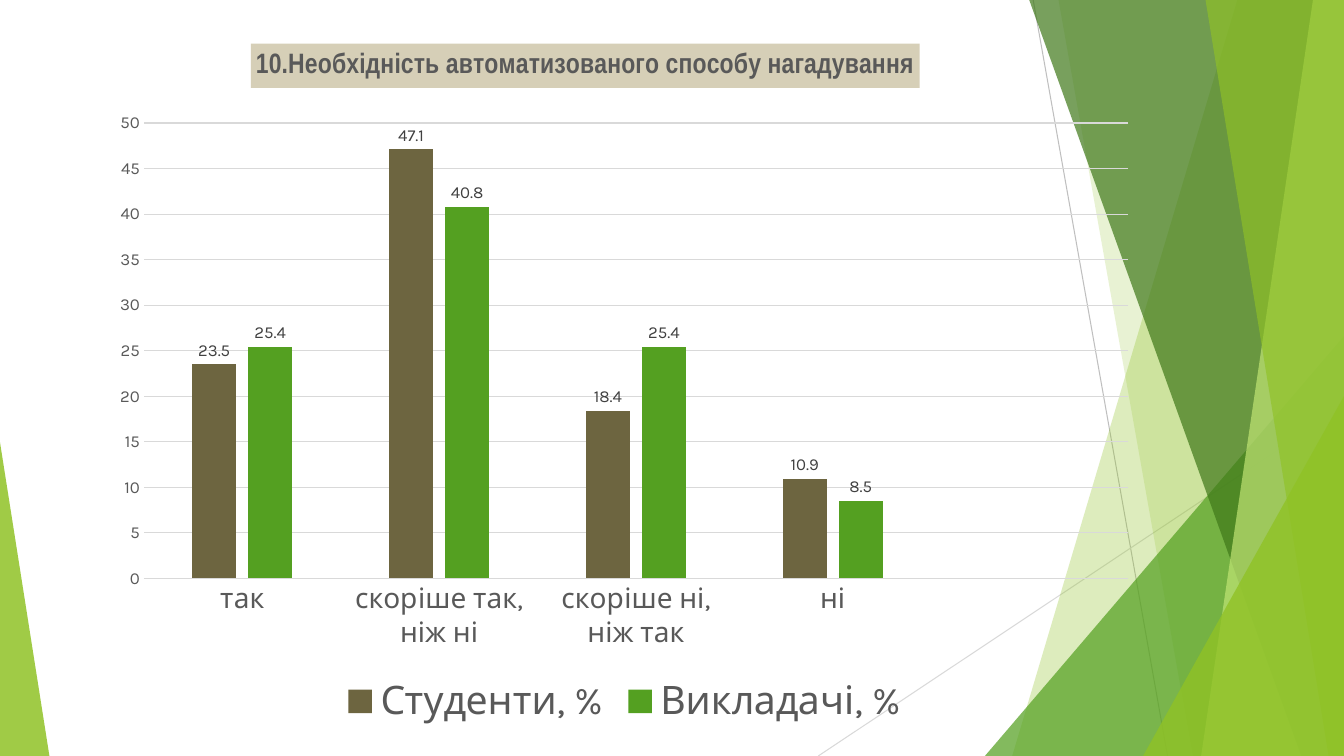
"""Build the slide with a column chart on the need for automated reminders."""
from lxml import etree
from pptx import Presentation
from pptx.chart.data import CategoryChartData
from pptx.dml.color import RGBColor
from pptx.enum import chart as ch, shapes
from pptx.oxml import parse_xml
from pptx.oxml.ns import nsdecls, qn
from pptx.util import Pt

COLORS = {"lime": "90C226", "green": "54A021", "dark": "3F7819", "pale": "C0E474",
          "olive": "6D6540", "sand": "D6CFB7", "text": "595959", "label": "404040",
          "grid": "D9D9D9", "line": "BFBFBF"}
W, H, TOP = 960, 540, -0.6


def rgb(name):
    return RGBColor.from_string(COLORS[name])


def set_font(font, size, color, name="Karla", bold=False):
    formats = {"size": Pt(size), "name": name, "bold": bold}
    for key, value in formats.items():
        setattr(font, key, value)
    font.color.rgb = rgb(color)


prs = Presentation()
prs.slide_width, prs.slide_height = Pt(W), Pt(H)
s = prs.slides.add_slide(prs.slide_layouts[6])

for x1, y1, x2, y2, color in [(738, 0, 834, H, "line"), (W, 290, 584.5, H, "grid")]:
    line = s.shapes.add_connector(shapes.MSO_CONNECTOR.STRAIGHT, Pt(x1), Pt(y1), Pt(x2), Pt(y2))
    line.line.color.rgb = rgb(color)
    line.line.width = Pt(0.75)
    etree.SubElement(line._element.spPr, qn("a:effectLst"))

facets = [
    ("band", (884, 723), "lime", 30),
    ("band", (756, 852), "lime", 20),
    ("triangle", (703.5, 240, 256.5, 300, 1), "green", 72),
    ("band", (735, 929.5), "dark", 70),
    ("band", (938, 858), "pale", 70),
    ("band", (861, 949), "lime", 65),
    ("triangle", (816.5, 283, 143.5, 257, 1), "lime", 80),
    ("triangle", (0, 316, 35.3, 224, 0), "lime", 85),
]
for kind, geometry, color, alpha in facets:
    if kind == "band":
        top_x, bottom_x = geometry
        fb = s.shapes.build_freeform(Pt(top_x), Pt(TOP))
        fb.add_line_segments([(Pt(x), Pt(y)) for x, y in [(W, TOP), (W, H), (bottom_x, H)]])
        sp = fb.convert_to_shape()
    else:
        *box, apex = geometry
        sp = s.shapes.add_shape(shapes.MSO_SHAPE.ISOSCELES_TRIANGLE, *map(Pt, box))
        sp.adjustments[0] = apex
    sp.shadow.inherit = False
    sp.line.fill.background()
    sp.fill.solid()
    sp.fill.fore_color.rgb = rgb(color)
    clr = sp._element.spPr.find(qn("a:solidFill"))[0]
    etree.SubElement(clr, qn("a:alpha"), val=str(alpha * 1000))

data = CategoryChartData()
data.categories = ["так", "скоріше так, ніж ні", "скоріше ні, ніж так", "ні", ""]
data.add_series("Студенти, %", [23.5, 47.1, 18.4, 10.9, None])
data.add_series("Викладачі, %", [25.4, 40.8, 25.4, 8.5, None])
chart = s.shapes.add_chart(ch.XL_CHART_TYPE.COLUMN_CLUSTERED, Pt(71.3), Pt(25.2),
                           Pt(749.5), Pt(497.5), data).chart
set_font(chart.font, 10, "label")

chart.has_title = True
title = chart.chart_title
r = title.text_frame.paragraphs[0].add_run()
r.text = "10.Необхідність автоматизованого способу нагадування"
set_font(r.font, 20, "text", "Arial Narrow", True)
title.format.fill.solid()
title.format.fill.fore_color.rgb = rgb("sand")

plot = chart.plots[0]
plot.gap_width, plot.overlap, plot.vary_by_categories = 219, -27, False
for series, color in zip(plot.series, ["olive", "green"]):
    series.format.fill.solid()
    series.format.fill.fore_color.rgb = rgb(color)
    labels = series.data_labels
    labels.show_value = True
    labels.position = ch.XL_LABEL_POSITION.OUTSIDE_END
    set_font(labels.font, 12, "label")

for axis, size in [(chart.category_axis, 20), (chart.value_axis, 12)]:
    axis.major_tick_mark = axis.minor_tick_mark = ch.XL_TICK_MARK.NONE
    set_font(axis.tick_labels.font, size, "text")
values = chart.value_axis
values.minimum_scale, values.maximum_scale, values.major_unit = 0, 50, 5
values.format.line.fill.background()
for item in (chart.category_axis, values.major_gridlines):
    item.format.line.color.rgb = rgb("grid")
    item.format.line.width = Pt(0.75)

chart.has_legend = True
chart.legend.position = ch.XL_LEGEND_POSITION.BOTTOM
chart.legend.include_in_layout = False
set_font(chart.legend.font, 28, "text")

title_layout = {"xMode": "edge", "yMode": "edge", "x": 0.144, "y": 0.012}
plot_layout = {"layoutTarget": "inner", "xMode": "edge", "yMode": "edge",
               "x": 0.042, "y": 0.126, "w": 0.938, "h": 0.654}
plot_area = chart._chartSpace.chart.plotArea
for parent, before, layout in [(title._element, "c:overlay", title_layout),
                               (plot_area, "c:barChart", plot_layout)]:
    for old in parent.findall(qn("c:layout")):
        parent.remove(old)
    parts = "".join(f'<c:{key} val="{value}"/>' for key, value in layout.items())
    node = parse_xml(f'<c:layout {nsdecls("c")}><c:manualLayout>{parts}</c:manualLayout></c:layout>')
    parent.find(qn(before)).addprevious(node)

prs.save("out.pptx")
